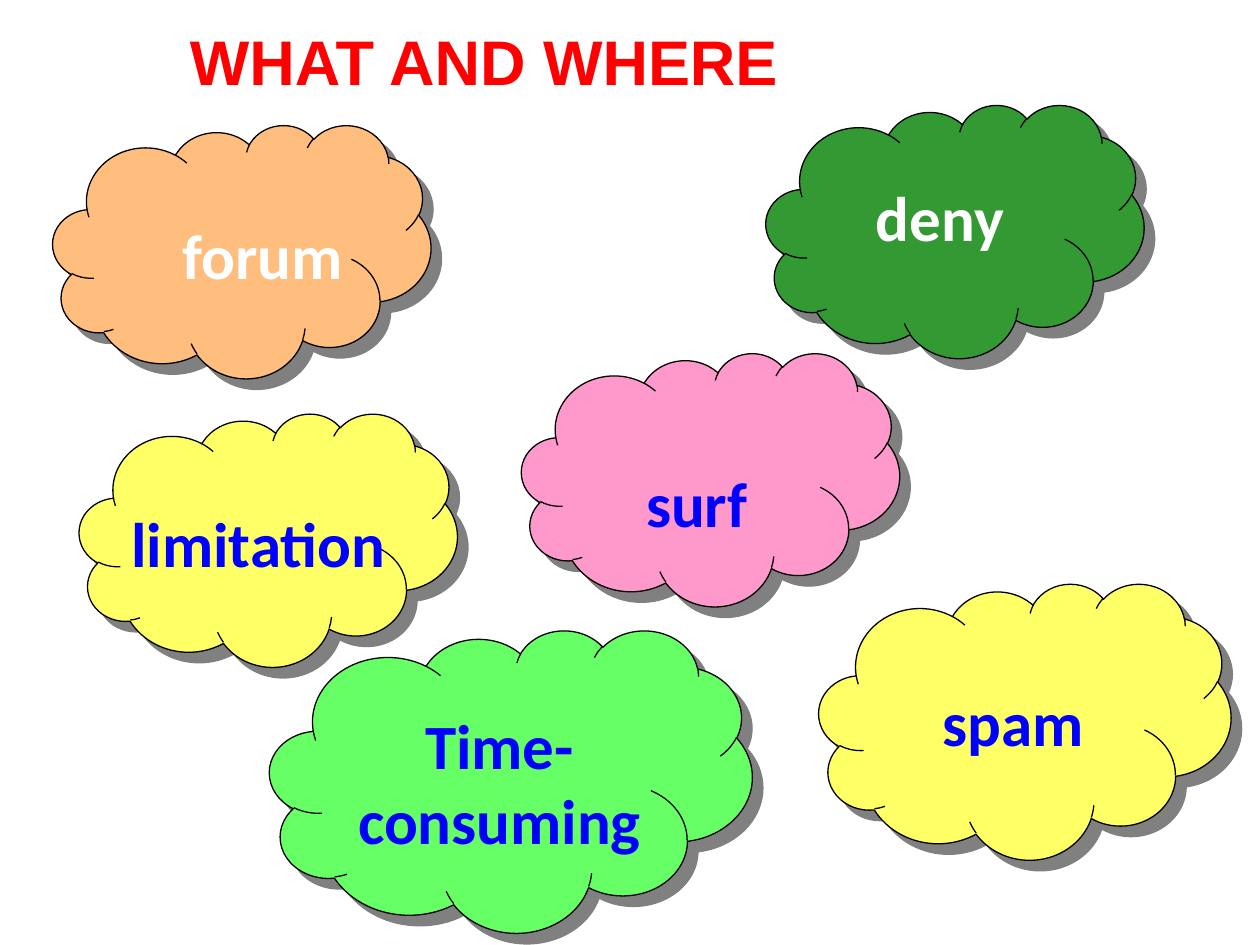
import pptx
import pptx.util
import pptx.dml.color
import pptx.enum.shapes
import pptx.enum.text
import pptx.oxml
import pptx.oxml.ns

WIDE, HIGH = 10, 7.5
COLS, ROWS = 100, 75
HUES = {
    "red": "FF0000", "white": "FFFFFF", "blue": "0000FF", "black": "000000",
    "gray": "808080", "peach": "FFBE7D", "green": "339933", "yellow": "FFFF66",
    "pink": "FF99CC", "lime": "66FF66",
}
SMALL = (30, 20.1)
CLOUDS = [
    ("peach", (4.2, 9.9), SMALL),
    ("green", (60.8, 8.3), SMALL),
    ("yellow", (6.3, 32.8), SMALL),
    ("pink", (41.4, 28), SMALL),
    ("lime", (21.4, 50), (38.3, 24)),
    ("yellow", (65, 46.3), (32.7, 21.9)),
]
WORDS = [
    ("forum", "white", (12.1, 16.6), (17.5, 7.1)),
    ("deny", "white", (66.1, 13.6), (17, 7.1)),
    ("limitation", "blue", (8.1, 39.5), (24.8, 7.1)),
    ("surf", "blue", (47.3, 36.3), (16, 7.1)),
    ("Time-consuming", "blue", (21.6, 55.5), (36.1, 13.1)),
    ("spam", "blue", (72.4, 53.7), (16, 7.1)),
]


def hue(name):
    """Return the named colour."""
    return pptx.dml.color.RGBColor.from_string(HUES[name])


def place(spot, size):
    """Turn grid columns and rows into left, top, width and height."""
    wide, high = WIDE / COLS, HIGH / ROWS
    return [pptx.util.Inches(n * unit)
            for n, unit in zip((*spot, *size), (wide, high, wide, high))]


def shade(shape, dist=8.5, angle=45):
    """Give a shape a hard gray shadow."""
    shape.shadow.inherit = False
    space = pptx.oxml.ns.nsdecls("a")
    drop = pptx.oxml.parse_xml(
        f'<a:outerShdw {space} dist="{pptx.util.Pt(dist)}" dir="{angle * 60000}" '
        f'algn="ctr" rotWithShape="0"><a:srgbClr val="{HUES["gray"]}"/></a:outerShdw>')
    shape._element.spPr.find(pptx.oxml.ns.qn("a:effectLst")).append(drop)


def cloud(slide, fill, spot, size):
    """Draw a filled cloud with a thin outline."""
    kind = pptx.enum.shapes.MSO_SHAPE.CLOUD
    shape = slide.shapes.add_shape(kind, *place(spot, size))
    shape.fill.solid()
    shape.fill.fore_color.rgb = hue(fill)
    shape.line.color.rgb = hue("black")
    shape.line.width = pptx.util.Pt(0.75)
    shade(shape)


def label(slide, text, color, spot, size, font="Calibri"):
    """Write bold centred text in a box."""
    frame = slide.shapes.add_textbox(*place(spot, size)).text_frame
    frame.word_wrap = True
    frame.vertical_anchor = pptx.enum.text.MSO_ANCHOR.MIDDLE
    frame.text = text
    line = frame.paragraphs[0]
    line.alignment = pptx.enum.text.PP_ALIGN.CENTER
    face = line.runs[0].font
    face.name, face.size, face.bold = font, pptx.util.Pt(36), True
    face.color.rgb = hue(color)


def main():
    """Build the slide of word clouds."""
    deck = pptx.Presentation()
    deck.slide_width = pptx.util.Inches(WIDE)
    deck.slide_height = pptx.util.Inches(HIGH)
    slide = deck.slides.add_slide(deck.slide_layouts[6])
    label(slide, "WHAT AND WHERE", "red", (10, 1.2), (56.8, 7.1), "Arial")
    for item in CLOUDS:
        cloud(slide, *item)
    for item in WORDS:
        label(slide, *item)
    deck.save("out.pptx")


if __name__ == "__main__":
    main()
